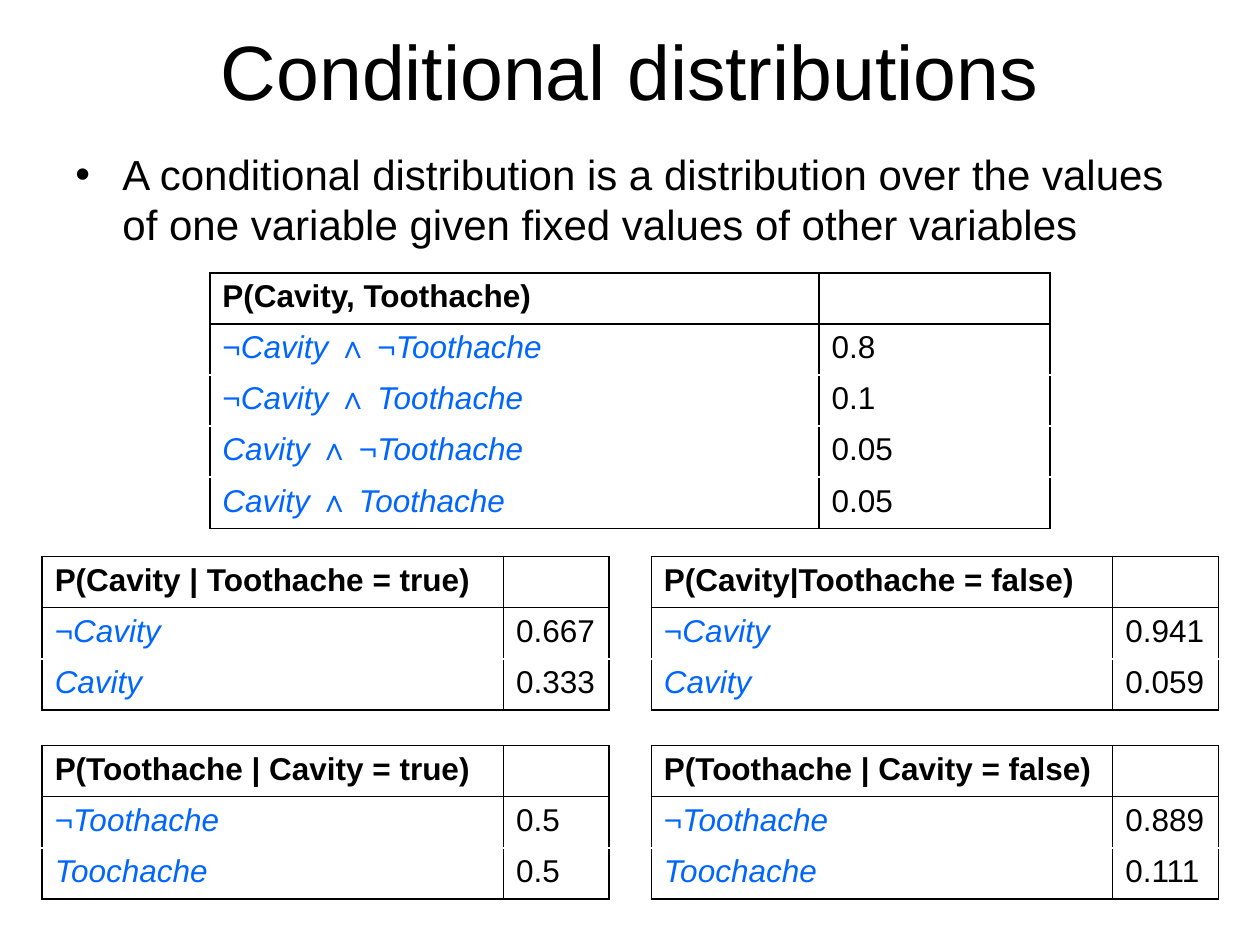
from dataclasses import dataclass
from itertools import groupby

from lxml.etree import SubElement
from pptx import Presentation
from pptx.dml.color import RGBColor
from pptx.enum.text import MSO_ANCHOR, PP_ALIGN
from pptx.oxml.ns import qn
from pptx.util import Cm, Pt

FONT = "Arial"
BLACK, WHITE, BLUE = "000000", "FFFFFF", "0066FF"
ROW_HEIGHT = 1.03
MARGIN = 1.27
CONTENT_WIDTH = 22.86


@dataclass
class Distribution:
    """A probability table; lengths are in centimetres."""
    left: float
    top: float
    widths: tuple[float, float]
    heading: str
    rows: list[tuple[str, str]]


def color(value: str) -> RGBColor:
    return RGBColor.from_string(value)


def add_run(paragraph, text: str, size: int, fill: str = BLACK,
            bold: bool = False, italic: bool = False) -> None:
    run = paragraph.add_run()
    run.text = text
    font = run.font
    font.name, font.size = FONT, Pt(size)
    font.bold, font.italic = bold, italic
    font.color.rgb = color(fill)


def add_event(paragraph, event: str) -> None:
    """Write variable names in italics and logic symbols upright."""
    for is_symbol, characters in groupby(event, lambda c: c in "¬∧"):
        add_run(paragraph, "".join(characters), 18, BLUE, italic=not is_symbol)


def format_cell(cell, top: str, bottom: str) -> None:
    properties = cell._tc.get_or_add_tcPr()
    borders = {"a:lnL": BLACK, "a:lnR": BLACK, "a:lnT": top, "a:lnB": bottom}
    for tag, value in borders.items():
        line = SubElement(properties, qn(tag), w=str(Pt(1)))
        solid = SubElement(line, qn("a:solidFill"))
        SubElement(solid, qn("a:srgbClr"), val=value)
    cell.fill.solid()
    cell.fill.fore_color.rgb = color(WHITE)


def add_distribution(slide, distribution: Distribution) -> None:
    row_count = len(distribution.rows) + 1
    table = slide.shapes.add_table(
        row_count, 2, Cm(distribution.left), Cm(distribution.top),
        Cm(sum(distribution.widths)), Cm(ROW_HEIGHT * row_count)).table
    table.first_row = table.horz_banding = False
    for column, width in zip(table.columns, distribution.widths):
        column.width = Cm(width)
    for index, row in enumerate(table.rows):
        row.height = Cm(ROW_HEIGHT)
        top = BLACK if index <= 1 else WHITE
        bottom = BLACK if index in (0, row_count - 1) else WHITE
        for cell in row.cells:
            format_cell(cell, top, bottom)
    add_run(table.cell(0, 0).text_frame.paragraphs[0],
            distribution.heading, 18, bold=True)
    for index, (event, probability) in enumerate(distribution.rows, start=1):
        add_event(table.cell(index, 0).text_frame.paragraphs[0], event)
        add_run(table.cell(index, 1).text_frame.paragraphs[0], probability, 18)


def add_title(slide, text: str) -> None:
    title = slide.shapes.title
    title.left, title.top = Cm(MARGIN), Cm(0.2)
    title.width, title.height = Cm(CONTENT_WIDTH), Cm(2.41)
    frame = title.text_frame
    frame.vertical_anchor = MSO_ANCHOR.MIDDLE
    paragraph = frame.paragraphs[0]
    paragraph.alignment = PP_ALIGN.CENTER
    add_run(paragraph, text, 44)


def add_bullet(slide, text: str) -> None:
    box = slide.shapes.add_textbox(
        Cm(MARGIN), Cm(2.87), Cm(CONTENT_WIDTH), Cm(3.89))
    box.text_frame.word_wrap = True
    paragraph = box.text_frame.paragraphs[0]
    properties = paragraph._p.get_or_add_pPr()
    properties.set("marL", str(Cm(0.95)))
    properties.set("indent", str(Cm(-0.95)))
    SubElement(properties, qn("a:buFont"), typeface=FONT)
    SubElement(properties, qn("a:buChar"), char="•")
    add_run(paragraph, text, 24)


JOINT = Distribution(4.23, 5.5, (12.28, 4.66), "P(Cavity, Toothache)", [
    ("¬Cavity ∧ ¬Toothache", "0.8"),
    ("¬Cavity ∧ Toothache", "0.1"),
    ("Cavity ∧ ¬Toothache", "0.05"),
    ("Cavity ∧ Toothache", "0.05"),
])

CONDITIONALS = [
    ("P(Cavity | Toothache = true)", [("¬Cavity", "0.667"), ("Cavity", "0.333")]),
    ("P(Cavity|Toothache = false)", [("¬Cavity", "0.941"), ("Cavity", "0.059")]),
    ("P(Toothache | Cavity = true)", [("¬Toothache", "0.5"), ("Toochache", "0.5")]),
    ("P(Toothache | Cavity = false)", [("¬Toothache", "0.889"), ("Toochache", "0.111")]),
]


def main() -> None:
    presentation = Presentation()
    presentation.slide_width, presentation.slide_height = Cm(25.4), Cm(19.05)
    slide = presentation.slides.add_slide(presentation.slide_layouts[5])
    add_title(slide, "Conditional distributions")
    add_bullet(slide, "A conditional distribution is a distribution over the values "
                      "of one variable given fixed values of other variables")
    add_distribution(slide, JOINT)
    for index, (heading, rows) in enumerate(CONDITIONALS):
        grid_row, grid_column = divmod(index, 2)
        add_distribution(slide, Distribution(
            0.85 + 12.28 * grid_column, 11.22 + 3.81 * grid_row,
            (9.3, 2.13), heading, rows))
    presentation.save("out.pptx")


if __name__ == "__main__":
    main()
